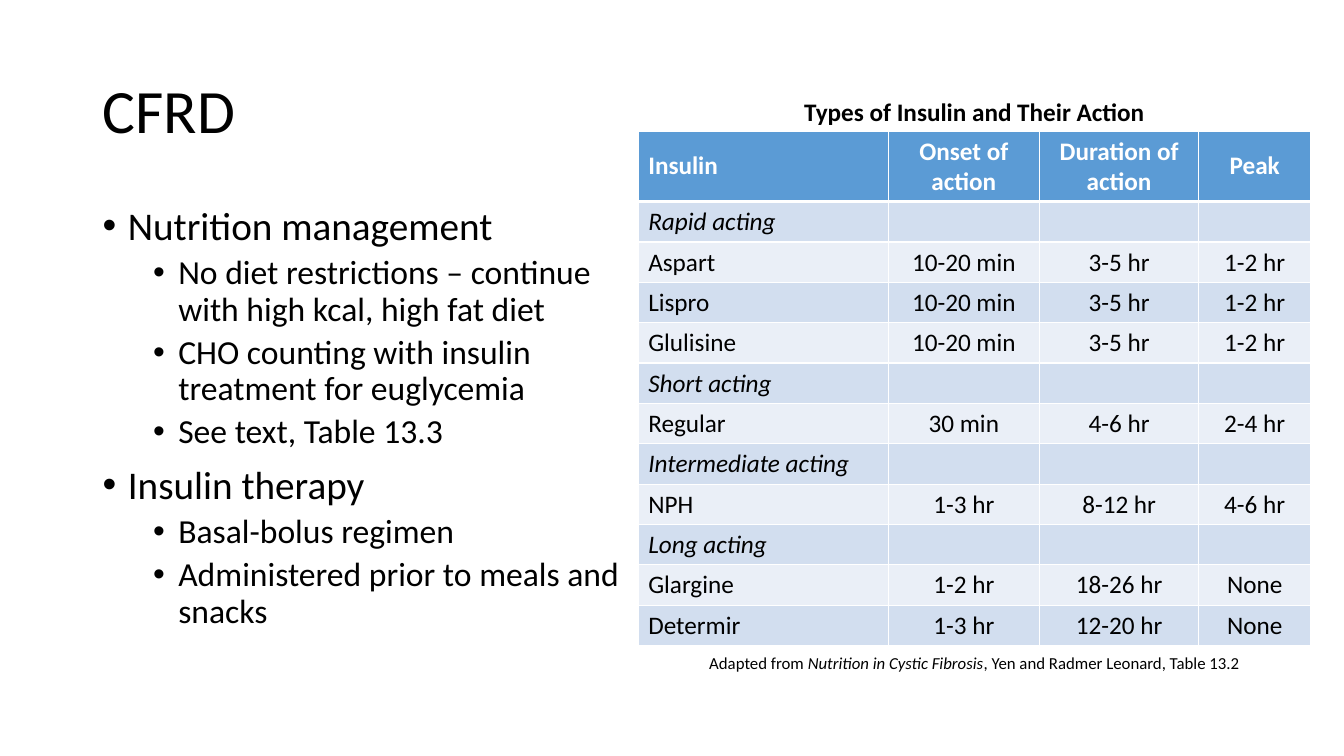
from lxml.etree import SubElement
from pptx import Presentation
from pptx.dml.color import RGBColor
from pptx.enum.text import MSO_ANCHOR as Anchor, PP_ALIGN as Align
from pptx.oxml.ns import qn
from pptx.util import Inches, Pt

FONT = "Calibri"
BLACK, WHITE = "000000", "FFFFFF"
HEADER_FILL, BAND_FILLS = "5B9BD5", ("D2DEEF", "EAEFF7")

OUTLINE = [
    ("Nutrition management", [
        "No diet restrictions – continue with high kcal, high fat diet",
        "CHO counting with insulin treatment for euglycemia",
        "See text, Table 13.3",
    ]),
    ("Insulin therapy", [
        "Basal-bolus regimen",
        "Administered prior to meals and snacks",
    ]),
]

COLUMN_WIDTHS = (2.48, 1.5, 1.58, 1.11)
HEADER = ("Insulin", "Onset of action", "Duration of action", "Peak")
INSULINS = [
    ("Rapid acting", [
        ("Aspart", "10-20 min", "3-5 hr", "1-2 hr"),
        ("Lispro", "10-20 min", "3-5 hr", "1-2 hr"),
        ("Glulisine", "10-20 min", "3-5 hr", "1-2 hr"),
    ]),
    ("Short acting", [("Regular", "30 min", "4-6 hr", "2-4 hr")]),
    ("Intermediate acting", [("NPH", "1-3 hr", "8-12 hr", "4-6 hr")]),
    ("Long acting", [
        ("Glargine", "1-2 hr", "18-26 hr", "None"),
        ("Determir", "1-3 hr", "12-20 hr", "None"),
    ]),
]


def color(hex_code):
    return RGBColor.from_string(hex_code)


def add_span(para, text, size, hex_code=BLACK, bold=False, italic=False):
    span = para.add_run()
    span.text = text
    font = span.font
    font.name, font.size = FONT, Pt(size)
    font.bold, font.italic = bold, italic
    font.color.rgb = color(hex_code)


def add_text_frame(page, left, top, width, height):
    box = page.shapes.add_textbox(Inches(left), Inches(top), Inches(width), Inches(height))
    box.text_frame.word_wrap = True
    return box.text_frame


def add_title(page, left, top, width, height):
    frame = add_text_frame(page, left, top, width, height)
    frame.vertical_anchor = Anchor.MIDDLE
    para = frame.paragraphs[0]
    para.line_spacing = 0.9
    add_span(para, "CFRD", 44)


def add_bullet(para, text, indent, size, space_before):
    """Fill a paragraph with bulleted text on a hanging indent."""
    para.line_spacing = 0.9
    para.space_before = Pt(space_before)
    props = para._p.get_or_add_pPr()
    props.set("marL", str(Inches(indent)))
    props.set("indent", str(-Inches(0.25)))
    SubElement(props, qn("a:buFont"), typeface="Arial")
    SubElement(props, qn("a:buChar"), char="•")
    add_span(para, text, size)


def add_outline(page, left, top, width, height):
    frame = add_text_frame(page, left, top, width, height)
    for index, (topic, points) in enumerate(OUTLINE):
        para = frame.add_paragraph() if index else frame.paragraphs[0]
        add_bullet(para, topic, 0.25, 28, 10)
        for point in points:
            para = frame.add_paragraph()
            para.level = 1
            add_bullet(para, point, 0.75, 24, 5)


def set_borders(cell, top, bottom):
    """Draw white cell borders; top and bottom widths are in points."""
    props = cell._tc.get_or_add_tcPr()
    for side, width in (("L", 1), ("R", 1), ("T", top), ("B", bottom)):
        line = SubElement(props, qn(f"a:ln{side}"), w=str(Pt(width)))
        fill = SubElement(line, qn("a:solidFill"))
        SubElement(fill, qn("a:srgbClr"), val=WHITE)


def add_insulin_table(page, left, top, width, height):
    rows = [HEADER]
    for group, insulins in INSULINS:
        rows += [(group, "", "", ""), *insulins]
    row_height = 0.4
    table = page.shapes.add_table(len(rows), len(HEADER), Inches(left), Inches(top),
                                  Inches(width), Inches(height)).table
    for column, column_width in zip(table.columns, COLUMN_WIDTHS):
        column.width = Inches(column_width)
    for r, values in enumerate(rows):
        is_header = r == 0
        is_group = not values[1]
        table.rows[r].height = Inches(height - row_height * (len(rows) - 1) if is_header
                                      else row_height)
        for c, value in enumerate(values):
            cell = table.cell(r, c)
            set_borders(cell, 3 if r == 1 else 1, 3 if is_header else 1)
            cell.fill.solid()
            cell.fill.fore_color.rgb = color(HEADER_FILL if is_header
                                             else BAND_FILLS[(r - 1) % 2])
            if is_header:
                cell.vertical_anchor = Anchor.MIDDLE
            para = cell.text_frame.paragraphs[0]
            para.alignment = Align.CENTER if c else Align.LEFT
            if value:
                add_span(para, value, 18, WHITE if is_header else BLACK, is_header, is_group)


def add_caption(page, left, top, width, height):
    para = add_text_frame(page, left, top, width, height).paragraphs[0]
    para.alignment = Align.CENTER
    add_span(para, "Types of Insulin and Their Action", 18, bold=True)


def add_source_note(page, left, top, width, height):
    para = add_text_frame(page, left, top, width, height).paragraphs[0]
    para.alignment = Align.CENTER
    add_span(para, "Adapted from", 12)
    add_span(para, " Nutrition in Cystic Fibrosis", 12, italic=True)
    add_span(para, ", Yen and Radmer Leonard, Table 13.2", 12)


def main():
    deck = Presentation()
    deck.slide_width, deck.slide_height = Inches(13.33), Inches(7.5)
    page = deck.slides.add_slide(deck.slide_layouts[6])
    add_title(page, 0.92, 0.4, 11.5, 1.45)
    add_outline(page, 0.92, 2, 5.41, 4.76)
    add_insulin_table(page, 6.33, 1.3, 6.67, 5.1)
    add_caption(page, 6.33, 0.91, 6.67, 0.4)
    add_source_note(page, 6.83, 6.43, 5.67, 0.3)
    deck.save("out.pptx")


if __name__ == "__main__":
    main()
